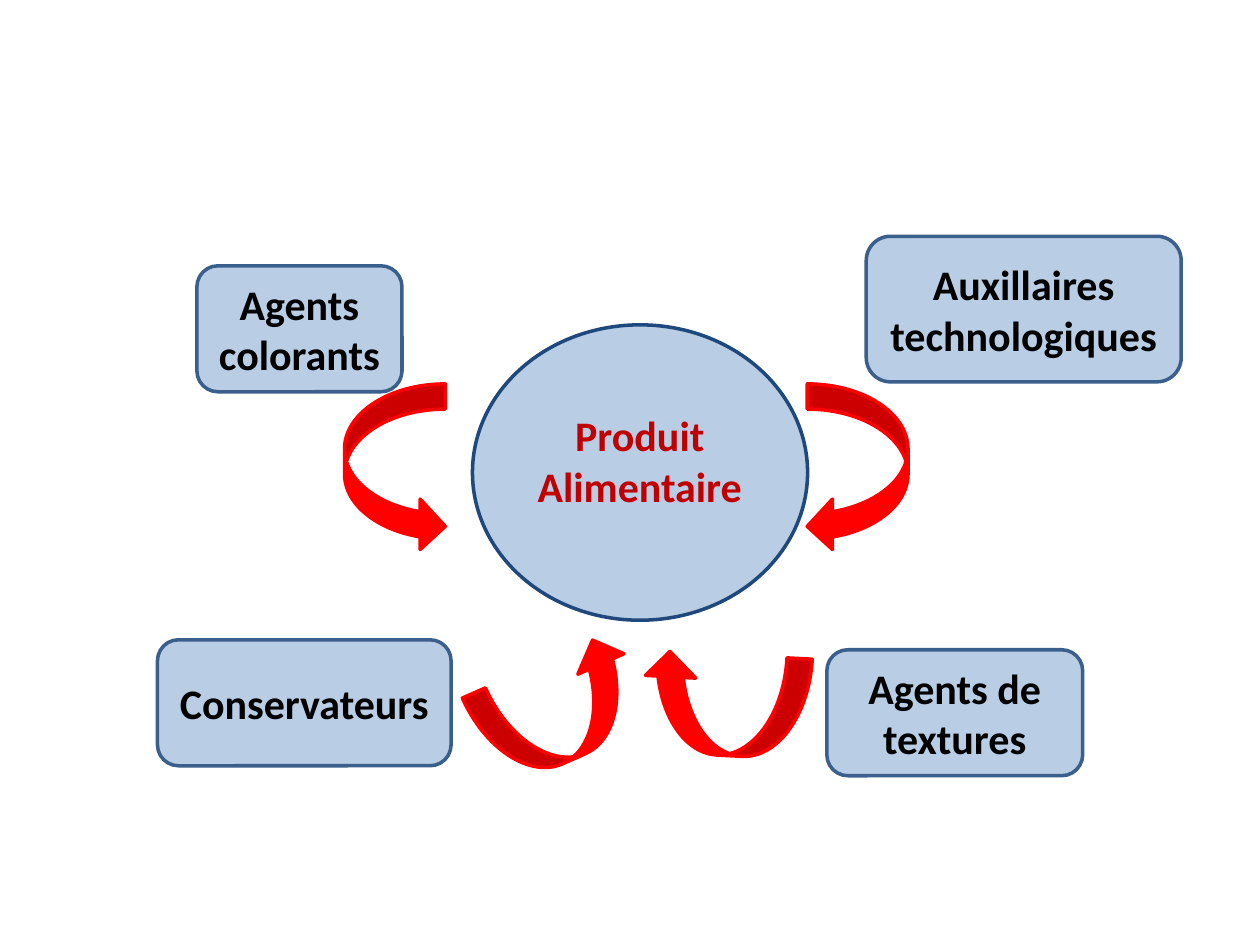
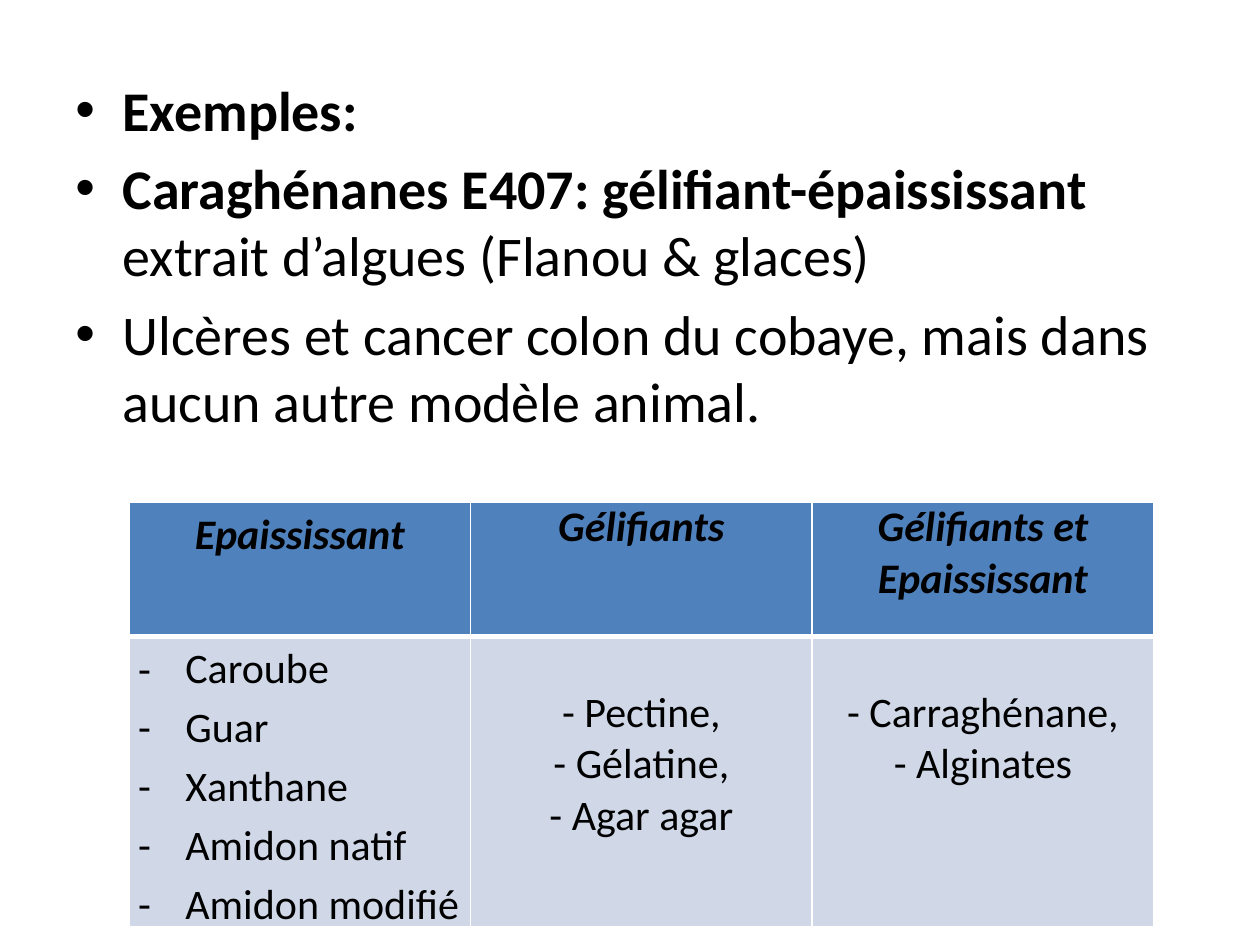
from lxml.etree import SubElement
from pptx import Presentation
from pptx.dml.color import RGBColor
from pptx.enum.shapes import MSO_SHAPE
from pptx.enum.text import MSO_ANCHOR, PP_ALIGN
from pptx.oxml.ns import qn
from pptx.util import Pt

FONT = "Calibri"
BLACK, WHITE, RED, DARK_RED = "000000", "FFFFFF", "FF0000", "C00000"
PALE_BLUE, NAVY, EDGE_BLUE = "B9CDE5", "1F497D", "3A5F8C"
HEADER_BLUE, ROW_BLUE = "4F81BD", "D0D8E8"
INDENT = Pt(27)


def colour(value):
    return RGBColor.from_string(value)


def write(frame, spans, size=24, ink=BLACK, italic=False, bullet=None, spacing=None):
    """Add one paragraph of (text, bold) spans, centred unless it has a bullet."""
    para = frame.paragraphs[0]
    if para.runs:
        para = frame.add_paragraph()
    para.alignment = PP_ALIGN.LEFT if bullet else PP_ALIGN.CENTER
    if spacing:
        para.line_spacing = spacing
    for text, bold in spans:
        span = para.add_run()
        span.text = text
        font = span.font
        font.name, font.size, font.bold, font.italic = FONT, Pt(size), bold, italic
        font.color.rgb = colour(ink)
    if bullet:
        properties = para._p.get_or_add_pPr()
        properties.set("marL", str(INDENT))
        properties.set("indent", str(-INDENT))
        SubElement(properties, qn("a:buFont"), typeface="Arial" if bullet == "•" else FONT)
        SubElement(properties, qn("a:buChar"), char=bullet)
    return para


deck = Presentation()
deck.slide_width, deck.slide_height = Pt(720), Pt(540)
blank = deck.slide_layouts[6]

# Slide 1: additives around the food product
page = deck.slides.add_slide(blank)
OVAL, BOX = MSO_SHAPE.OVAL, MSO_SHAPE.ROUNDED_RECTANGLE
RIGHT, LEFT = MSO_SHAPE.CURVED_RIGHT_ARROW, MSO_SHAPE.CURVED_LEFT_ARROW
diagram = [
    # kind, left, top, width, height, rotation, fill, line, paragraphs
    (OVAL, 270, 185.6, 191.5, 168.8, 0, PALE_BLUE, NAVY, []),
    (BOX, 112.5, 151.9, 117.2, 72, 0, PALE_BLUE, EDGE_BLUE, ["Agents colorants"]),
    (BOX, 495, 135, 180, 83.2, 0, PALE_BLUE, EDGE_BLUE, ["Auxillaires", "technologiques"]),
    (BOX, 90, 365.6, 167.8, 72, 0, PALE_BLUE, EDGE_BLUE, ["Conservateurs"]),
    (BOX, 472.5, 371.3, 146.2, 72, 0, PALE_BLUE, EDGE_BLUE, ["Agents de textures"]),
    (RIGHT, 196.9, 219.4, 57.6, 95.8, 0, RED, RED, []),
    (LEFT, 461.3, 219.4, 57.6, 95.8, 0, RED, RED, []),
    (RIGHT, 290.9, 357.8, 57.6, 95.8, 246, RED, RED, []),
    (LEFT, 385.9, 355, 57.6, 95.8, 93.1, RED, RED, []),
]
for kind, left, top, width, height, rotation, fill, line, labels in diagram:
    shape = page.shapes.add_shape(kind, Pt(left), Pt(top), Pt(width), Pt(height))
    shape.rotation = rotation
    shape.shadow.inherit = False
    shape.fill.solid()
    shape.fill.fore_color.rgb = colour(fill)
    shape.line.color.rgb = colour(line)
    shape.line.width = Pt(2)
    shape.text_frame.vertical_anchor = MSO_ANCHOR.MIDDLE
    for label in labels:
        write(shape.text_frame, [(label, True)])

product = page.shapes.add_textbox(Pt(292.5), Pt(230.6), Pt(146.2), Pt(65.5))
product.text_frame.word_wrap = True
write(product.text_frame, [("Produit Alimentaire", True)], ink=DARK_RED)

# Slide 2: examples and table of texture agents
page = deck.slides.add_slide(blank)
examples = page.shapes.add_textbox(Pt(36), Pt(39.4), Pt(648), Pt(442.8))
examples.text_frame.word_wrap = True
for spans in [
    [("Exemples:", True)],
    [("Caraghénanes E407: gélifiant-épaississant ", True),
     ("extrait d’algues (Flanou & glaces)", False)],
    [("Ulcères et cancer colon du cobaye, mais dans aucun autre modèle animal.", False)],
]:
    para = write(examples.text_frame, spans, size=32, bullet="•")
    para.space_before = Pt(6.4)

columns = [
    ("Epaississant", ["Caroube", "Guar", "Xanthane", "Amidon natif", "Amidon modifié"]),
    ("Gélifiants", ["- Pectine,", "- Gélatine,", "- Agar agar"]),
    ("Gélifiants et Epaississant", ["- Carraghénane,", "- Alginates"]),
]
table = page.shapes.add_table(2, 3, Pt(73.7), Pt(286.9), Pt(585.6), Pt(242.6)).table
table.rows[0].height, table.rows[1].height = Pt(76.8), Pt(165.8)
for number, (heading, agents) in enumerate(columns):
    table.columns[number].width = Pt(195.2)
    first = number == 0
    header, body = table.cell(0, number), table.cell(1, number)
    for cell, fill, bottom in [(header, HEADER_BLUE, 3), (body, ROW_BLUE, 1)]:
        cell.margin_left = cell.margin_right = Pt(5.2)
        cell.margin_top = cell.margin_bottom = 0
        properties = cell._tc.get_or_add_tcPr()
        for side, weight in [("L", 1), ("R", 1), ("T", 3 if cell is body else 1), ("B", bottom)]:
            border = SubElement(properties, qn("a:ln" + side), w=str(Pt(weight)))
            SubElement(SubElement(border, qn("a:solidFill")), qn("a:srgbClr"), val=WHITE)
        cell.fill.solid()
        cell.fill.fore_color.rgb = colour(fill)
    write(header.text_frame, [(heading, True)], italic=True, spacing=1.15 if first else None)
    if not first:
        body.margin_top = Pt(29.3)
    for agent in agents:
        write(body.text_frame, [(agent, False)], bullet="-" if first else None,
              spacing=1.15 if first else None)

deck.save("out.pptx")
